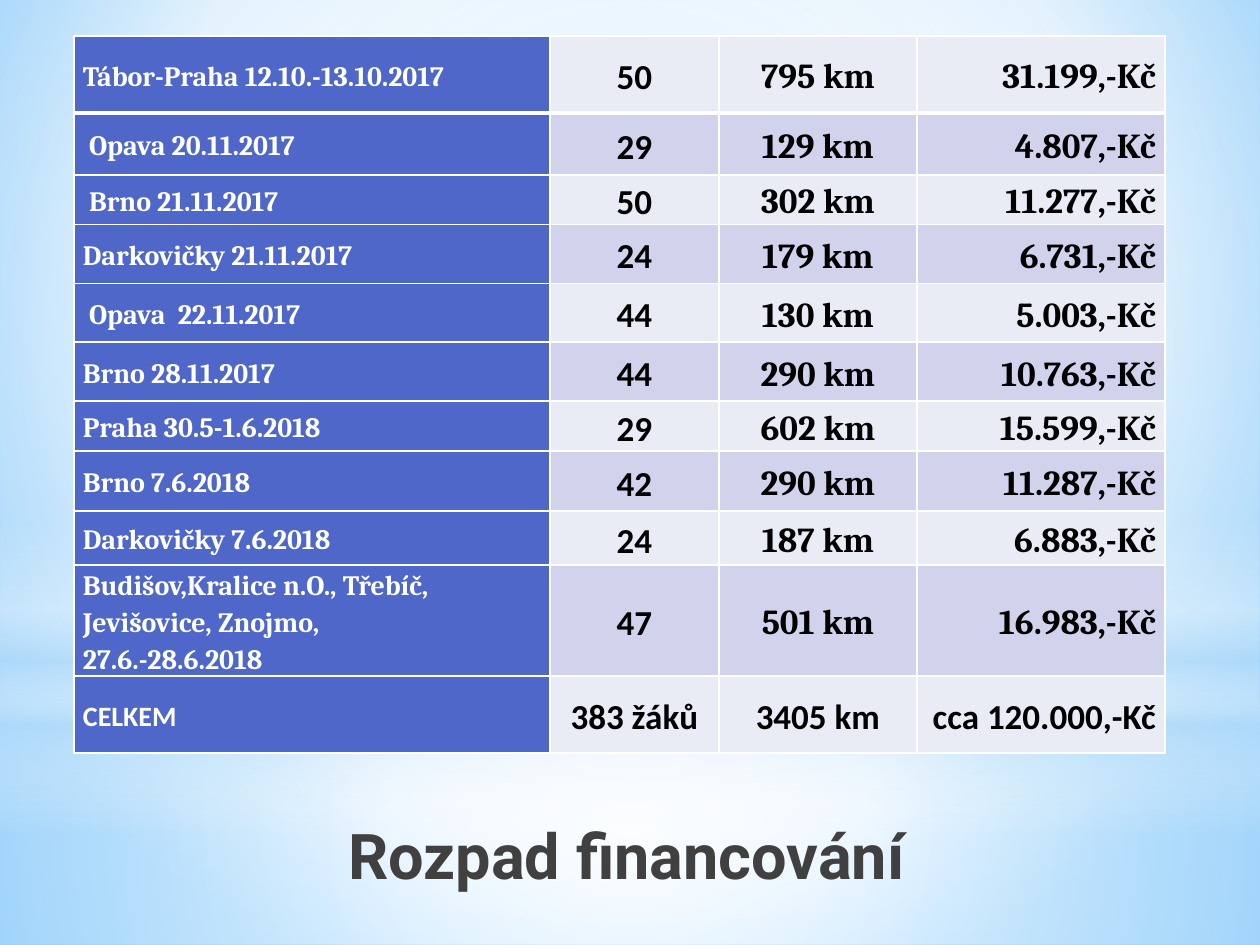
from dataclasses import dataclass

from pptx import Presentation
from pptx.dml.color import RGBColor
from pptx.enum.shapes import MSO_SHAPE
from pptx.enum.text import MSO_ANCHOR, PP_ALIGN
from pptx.oxml import parse_xml
from pptx.oxml.ns import nsdecls, qn
from pptx.util import Pt

RECT, OVAL = MSO_SHAPE.RECTANGLE, MSO_SHAPE.OVAL
LEFT, CENTER, RIGHT = PP_ALIGN.LEFT, PP_ALIGN.CENTER, PP_ALIGN.RIGHT
MIDDLE = MSO_ANCHOR.MIDDLE
EMU_PER_PX = 914400 / 126


@dataclass(frozen=True)
class Theme:
    white: str = "FFFFFF"
    black: str = "000000"
    title: str = "404040"
    label_fill: str = "4E67C8"
    bands: tuple = ("E9EBF5", "D0D3EB")
    sky: str = "9ED5FF"
    deep_sky: str = "5BB9FF"
    haze: str = "B4DCFA"
    serif: str = "Cambria"
    sans: str = "Calibri"
    title_font: str = "Roboto"
    label_size: int = 16
    value_size: int = 20
    title_size: int = 36


T = Theme()
COLUMNS = [476, 169, 198, 248]
ALIGNS = [LEFT, CENTER, CENTER, RIGHT]
ROW_HEIGHTS = [77, 62, 49, 59, 59, 59, 50, 60, 54, 77, 77]
TRIPS = [
    ("Tábor-Praha 12.10.-13.10.2017", "50", "795 km", "31.199,-Kč"),
    (" Opava 20.11.2017", "29", "129 km", "4.807,-Kč"),
    (" Brno 21.11.2017", "50", "302 km", "11.277,-Kč"),
    ("Darkovičky 21.11.2017", "24", "179 km", "6.731,-Kč"),
    (" Opava  22.11.2017", "44", "130 km", "5.003,-Kč"),
    ("Brno 28.11.2017", "44", "290 km", "10.763,-Kč"),
    ("Praha 30.5-1.6.2018", "29", "602 km", "15.599,-Kč"),
    ("Brno 7.6.2018", "42", "290 km", "11.287,-Kč"),
    ("Darkovičky 7.6.2018", "24", "187 km", "6.883,-Kč"),
    ("Budišov,Kralice n.O., Třebíč, Jevišovice, Znojmo,\n27.6.-28.6.2018",
     "47", "501 km", "16.983,-Kč"),
    ("CELKEM", "383 žáků", "3405 km", "cca 120.000,-Kč"),
]


def px(n):
    return round(n * EMU_PER_PX)


def box(*lengths):
    return [px(n) for n in lengths]


def set_gradient(fill, root, stops, focus=None):
    fill.gradient()
    old = root.find(".//" + qn("a:gradFill"))
    gs = "".join(
        f'<a:gs pos="{pos * 1000}"><a:srgbClr val="{color}">'
        f'<a:alpha val="{alpha * 1000}"/></a:srgbClr></a:gs>'
        for pos, color, alpha in stops)
    if focus:
        sides = " ".join(f'{k}="{v * 1000}"' for k, v in zip("ltrb", focus))
        course = f'<a:path path="circle"><a:fillToRect {sides}/></a:path>'
    else:
        course = '<a:lin ang="5400000" scaled="0"/>'
    old.getparent().replace(old, parse_xml(
        f'<a:gradFill {nsdecls("a")} rotWithShape="1"><a:gsLst>{gs}</a:gsLst>'
        f'{course}</a:gradFill>'))


def add_glow(s, shape, bounds, stops, focus=None):
    sp = s.shapes.add_shape(shape, *box(*bounds))
    sp.shadow.inherit = False
    sp.line.fill.background()
    set_gradient(sp.fill, sp._element, stops, focus)


def add_backdrop(s):
    center = (50, 50, 50, 50)
    set_gradient(s.background.fill, s._element,
                 [(0, T.sky, 100), (60, T.white, 100), (100, T.deep_sky, 100)],
                 (20, 10, 20, 60))
    add_glow(s, RECT, (0, 703, 1260, 242),
             [(0, T.white, 91), (37, T.white, 76), (100, T.haze, 79)], center)
    add_glow(s, RECT, (0, 0, 1260, 703),
             [(0, T.white, 89), (48, T.white, 62), (100, T.haze, 79)], center)
    add_glow(s, RECT, (0, 519, 1260, 315),
             [(0, T.white, 0), (29, T.white, 30), (45, T.haze, 40),
              (55, T.white, 26), (65, T.haze, 60), (100, T.white, 0)])
    add_glow(s, OVAL, (0, 221, 1260, 703),
             [(0, T.white, 100), (56, T.white, 0)], center)


def format_text(tf, font, size, color, align, spacing=None):
    for p in tf.paragraphs:
        p.alignment = align
        p.line_spacing = spacing
        for r in p.runs:
            r.font.name = font
            r.font.size = Pt(size)
            r.font.bold = True
            r.font.color.rgb = RGBColor.from_string(color)


def set_borders(cell, top, bottom):
    tc_pr = cell._tc.get_or_add_tcPr()
    for i, (side, width) in enumerate(zip("LRTB", (1, 1, top, bottom))):
        tc_pr.insert(i, parse_xml(
            f'<a:ln{side} {nsdecls("a")} w="{Pt(width)}"><a:solidFill>'
            f'<a:srgbClr val="{T.white}"/></a:solidFill></a:ln{side}>'))


def fill_cell(cell, text, row, col):
    label, total = col == 0, row == len(TRIPS) - 1
    cell.text_frame.text = text
    cell.vertical_anchor = MIDDLE
    cell.margin_left = cell.margin_right = px(9)
    cell.margin_top = cell.margin_bottom = 0
    cell.fill.solid()
    cell.fill.fore_color.rgb = RGBColor.from_string(
        T.label_fill if label else T.bands[row % 2])
    format_text(cell.text_frame,
                T.sans if total or col == 1 else T.serif,
                T.label_size if label else T.value_size,
                T.white if label else T.black,
                ALIGNS[col], 1.15)
    set_borders(cell, 3 if row == 1 else 1, 3 if row == 0 else 1)


def add_cost_table(s):
    frame = s.shapes.add_table(len(TRIPS), len(COLUMNS),
                               *box(74, 36, sum(COLUMNS), 726))
    table = frame.table
    table.first_row = table.horz_banding = False
    for column, width in zip(table.columns, COLUMNS):
        column.width = px(width)
    for row, height in zip(table.rows, ROW_HEIGHTS):
        row.height = px(height)
    frame.height = px(726)
    for i, trip in enumerate(TRIPS):
        for j, text in enumerate(trip):
            fill_cell(table.cell(i, j), text, i, j)


def add_title(s):
    tf = s.shapes.add_textbox(*box(26, 810, 1201, 158)).text_frame
    tf.word_wrap = True
    tf.text = "Rozpad financování"
    format_text(tf, T.title_font, T.title_size, T.title, CENTER)


def main():
    prs = Presentation()
    prs.slide_width, prs.slide_height = box(1260, 945)
    s = prs.slides.add_slide(prs.slide_layouts[6])
    add_backdrop(s)
    add_cost_table(s)
    add_title(s)
    prs.save("out.pptx")


if __name__ == "__main__":
    main()
